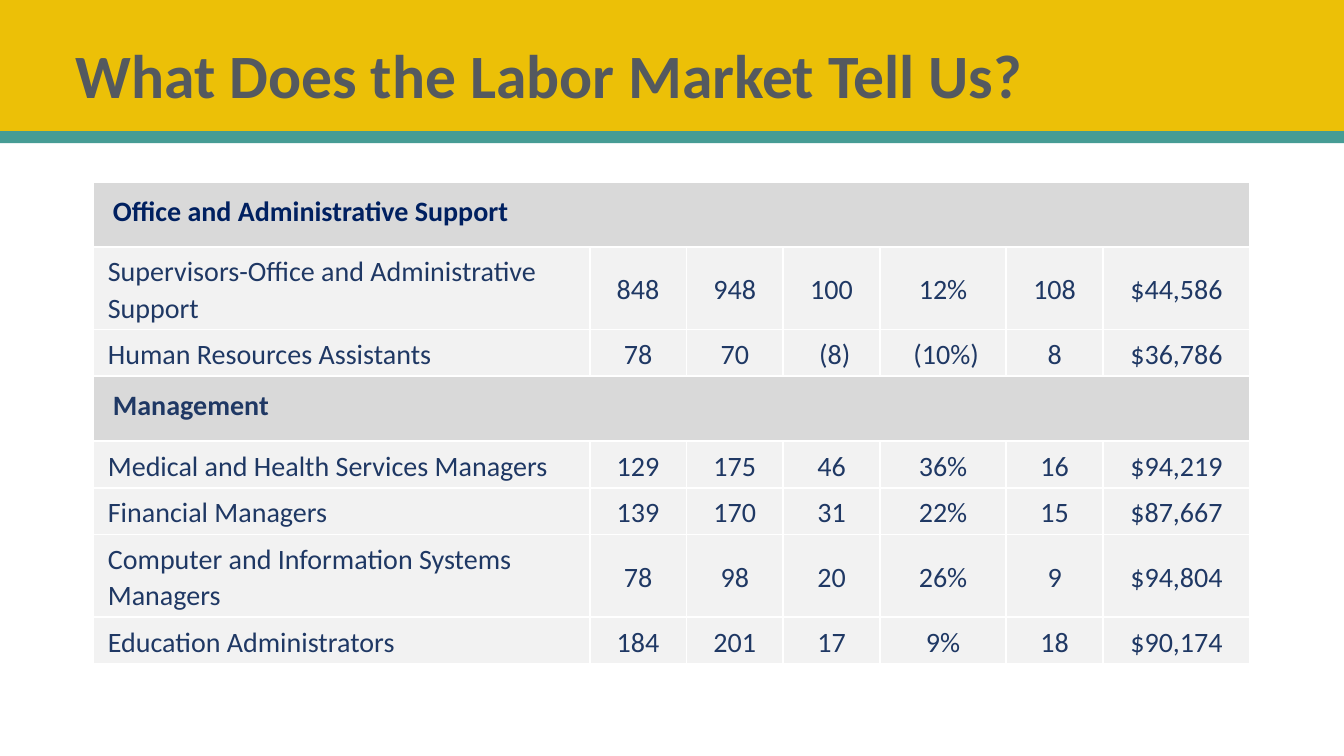
from dataclasses import dataclass

from lxml import etree
from pptx import Presentation
from pptx.dml.color import RGBColor
from pptx.enum.shapes import MSO_SHAPE
from pptx.enum.text import MSO_ANCHOR, PP_ALIGN
from pptx.oxml.ns import qn
from pptx.util import Inches, Pt

RECT = MSO_SHAPE.RECTANGLE
TOP, MIDDLE = MSO_ANCHOR.TOP, MSO_ANCHOR.MIDDLE
LEFT, CENTER = PP_ALIGN.LEFT, PP_ALIGN.CENTER

COLORS = {
    "gold": "ECC007", "teal": "469C95", "title": "54595F",
    "group": "D9D9D9", "row": "F2F2F2", "border": "FFFFFF",
    "navy": "002060", "blue": "1F3864",
}
FONT = "Calibri"
SLIDE_W, SLIDE_H = Inches(13.33), Inches(7.5)


@dataclass(frozen=True)
class Band:
    top: float
    height: float
    color: str


@dataclass(frozen=True)
class Group:
    name: str
    color: str


@dataclass(frozen=True)
class Job:
    values: tuple[str, ...]
    lines: int = 1


# Places and sizes are percentages of the slide's width and height
BANDS = [Band(0, 18.8, "gold"), Band(17.33, 1.6, "teal")]
TITLE_BOX = (4.88, 0.67, 86.27, 19.33)
TABLE_LEFT, TABLE_TOP = 6.9, 24.13
NUMBER_W = 7.2
COLUMNS = [36.98, NUMBER_W, NUMBER_W, NUMBER_W, 9.4, NUMBER_W, 10.95]
GROUP_H = 8.53
JOB_H = {1: 6.2, 2: 10.93}

# Cell margins in inches: left, top, right, bottom
GROUP_MARGINS = (0.2, 0.1, 0.2, 0.1)
JOB_MARGINS = (0.15, 0.02, 0.15, 0)

ROWS = [
    Group("Office and Administrative Support", "navy"),
    Job(("Supervisors-Office and Administrative Support",
         "848", "948", "100", "12%", "108", "$44,586"), lines=2),
    Job(("Human Resources Assistants",
         "78", "70", " (8)", " (10%)", "8", "$36,786")),
    Group("Management", "blue"),
    Job(("Medical and Health Services Managers",
         "129", "175", "46", "36%", "16", "$94,219")),
    Job(("Financial Managers",
         "139", "170", "31", "22%", "15", "$87,667")),
    Job(("Computer and Information Systems Managers",
         "78", "98", "20", "26%", "9", "$94,804"), lines=2),
    Job(("Education Administrators",
         "184", "201", "17", "9%", "18", "$90,174")),
]


def across(share: float) -> int:
    return round(SLIDE_W * share / 100)


def down(share: float) -> int:
    return round(SLIDE_H * share / 100)


def rgb(name: str) -> RGBColor:
    return RGBColor.from_string(COLORS[name])


def write(tf, text: str, *, size: float = 20, color: str = "blue",
          bold: bool = False, align=LEFT, spacing: float = 1.07) -> None:
    p = tf.paragraphs[0]
    p.alignment, p.line_spacing = align, spacing
    r = p.add_run()
    r.text = text
    r.font.name, r.font.size, r.font.bold = FONT, Pt(size), bold
    r.font.color.rgb = rgb(color)


def draw_band(s, band: Band) -> None:
    sp = s.shapes.add_shape(RECT, 0, down(band.top), SLIDE_W, down(band.height))
    sp.shadow.inherit = False
    sp.fill.solid()
    sp.fill.fore_color.rgb = rgb(band.color)
    sp.line.fill.background()


def draw_title(s, text: str) -> None:
    left, top, width, height = TITLE_BOX
    sp = s.shapes.add_textbox(across(left), down(top), across(width), down(height))
    tf = sp.text_frame
    tf.word_wrap = True
    tf.vertical_anchor = MIDDLE
    write(tf, text, size=44, color="title", bold=True, spacing=0.9)


def style_cell(cell, fill: str, margins: tuple[float, ...], anchor) -> None:
    # Borders come before the fill in the cell's properties
    tc_pr = cell._tc.get_or_add_tcPr()
    for side in ("lnL", "lnR", "lnT", "lnB"):
        ln = etree.SubElement(tc_pr, qn(f"a:{side}"), w=str(Pt(1.5)))
        solid = etree.SubElement(ln, qn("a:solidFill"))
        etree.SubElement(solid, qn("a:srgbClr"), val=COLORS["border"])
    cell.fill.solid()
    cell.fill.fore_color.rgb = rgb(fill)
    (cell.margin_left, cell.margin_top,
     cell.margin_right, cell.margin_bottom) = map(Inches, margins)
    cell.vertical_anchor = anchor


def draw_table(s, rows: list[Group | Job]) -> None:
    heights = [GROUP_H if isinstance(row, Group) else JOB_H[row.lines]
               for row in rows]
    table = s.shapes.add_table(
        len(rows), len(COLUMNS), across(TABLE_LEFT), down(TABLE_TOP),
        across(sum(COLUMNS)), down(sum(heights))).table
    table.first_row = table.horz_banding = False
    for column, width in zip(table.columns, COLUMNS):
        column.width = across(width)

    for table_row, row, height in zip(table.rows, rows, heights):
        table_row.height = down(height)
        cells = list(table_row.cells)
        if isinstance(row, Group):
            for cell in cells:
                style_cell(cell, "group", GROUP_MARGINS, TOP)
            cells[0].merge(cells[-1])
            write(cells[0].text_frame, row.name, color=row.color, bold=True)
        else:
            for i, (cell, value) in enumerate(zip(cells, row.values)):
                style_cell(cell, "row", JOB_MARGINS, MIDDLE)
                write(cell.text_frame, value, align=CENTER if i else LEFT)


def main() -> None:
    prs = Presentation()
    prs.slide_width, prs.slide_height = SLIDE_W, SLIDE_H
    s = prs.slides.add_slide(prs.slide_layouts[6])

    # Header
    for band in BANDS:
        draw_band(s, band)
    draw_title(s, "What Does the Labor Market Tell Us?")

    # Job figures by group
    draw_table(s, ROWS)
    prs.save("out.pptx")


if __name__ == "__main__":
    main()
